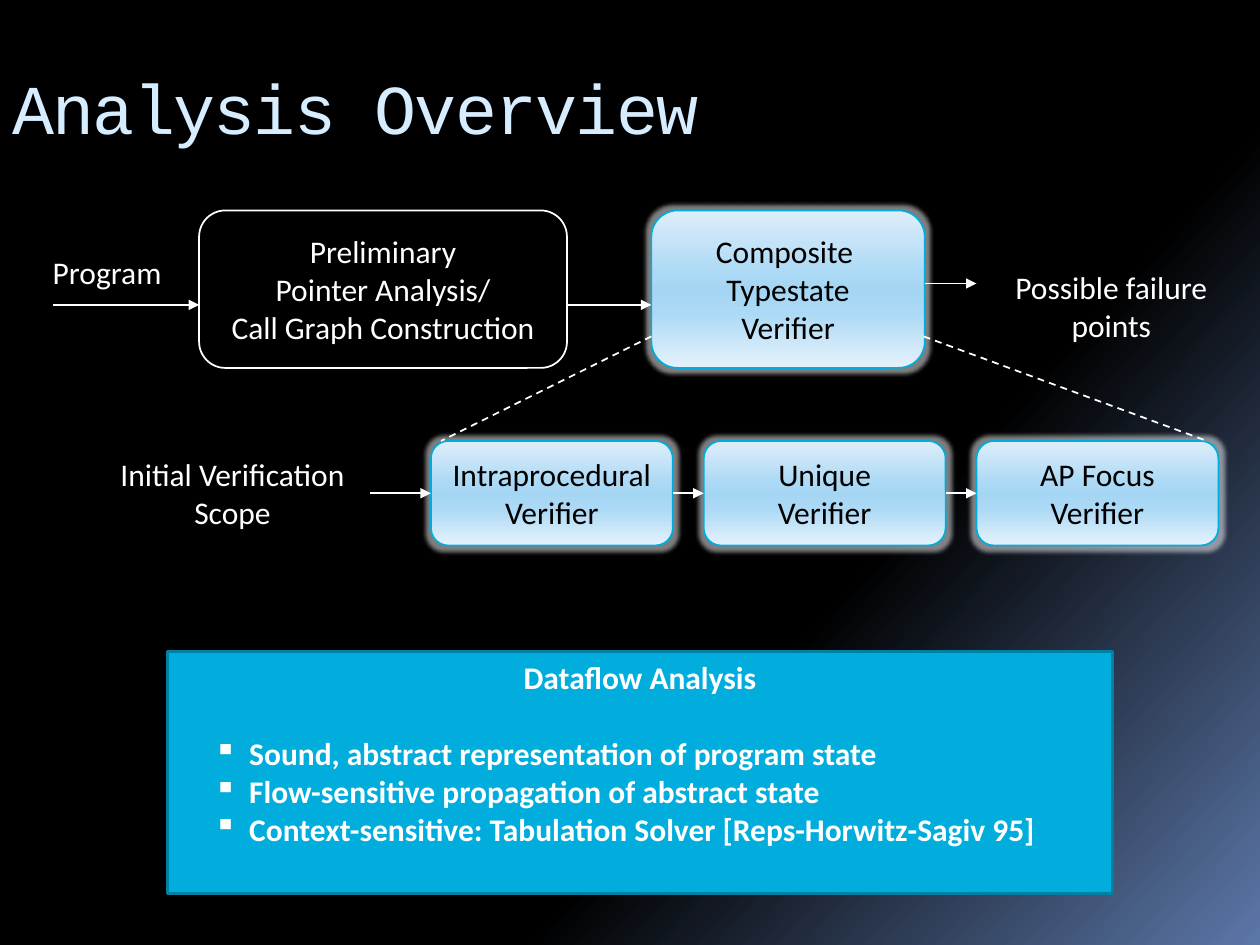
from lxml import etree
from pptx import Presentation
from pptx.dml.color import RGBColor
from pptx.enum import dml, shapes, text
from pptx.oxml import parse_xml
from pptx.oxml.ns import nsdecls, qn
from pptx.util import Inches, Pt

WHITE, BLACK, CYAN = "FFFFFF", "000000", "00ADDC"
NIGHT = [(0, BLACK), (65, BLACK), (100, "5B77A8")]
GLASS = [(0, "DEEEFA"), (40, "ACD9F5"), (50, "A4D6F4"), (65, "ACD9F5"), (100, "E5F2FB")]


def color(value):
    return RGBColor.from_string(value)


def set_gradient(fill, stops, angle):
    fill.gradient()
    fill.gradient_angle = 360 - angle
    stop_list = fill._xPr.find(".//" + qn("a:gsLst"))
    for child in list(stop_list):
        stop_list.remove(child)
    for pos, value in stops:
        gs = etree.SubElement(stop_list, qn("a:gs"), pos=str(pos * 1000))
        etree.SubElement(gs, qn("a:srgbClr"), val=value)


def add_lines(sp, lines, fill=WHITE, size=18, font="Calibri", bold=False, align=text.PP_ALIGN.CENTER):
    tf = sp.text_frame
    for i, line in enumerate(lines):
        p = tf.paragraphs[0] if i == 0 else tf.add_paragraph()
        p.text = line
        p.alignment = align
        p.font.size, p.font.name, p.font.bold = Pt(size), font, bold
        p.font.color.rgb = color(fill)
    return tf


def add_label(s, box, line, **style):
    sp = s.shapes.add_textbox(*map(Inches, box))
    sp.text_frame.word_wrap = True
    add_lines(sp, [line], **style)
    return sp


def add_title(s, box):
    sp = add_label(s, box, "Analysis Overview", fill="D6ECFF", size=40,
                   font="Courier New", align=text.PP_ALIGN.LEFT)
    sp.text_frame.margin_top = Inches(0.18)
    sp.text_frame.paragraphs[0].runs[0].font._element.set("spc", "-100")


def add_node(s, box, lines, glass=True):
    sp = s.shapes.add_shape(shapes.MSO_SHAPE.ROUNDED_RECTANGLE, *map(Inches, box))
    sp.shadow.inherit = False
    sp.line.color.rgb = color(CYAN if glass else WHITE)
    sp.line.width = Pt(1)
    if glass:
        set_gradient(sp.fill, GLASS, 90)
        effects = sp._element.spPr.find(qn("a:effectLst"))
        effects.append(parse_xml(
            f'<a:glow {nsdecls("a")} rad="63500"><a:srgbClr val="{WHITE}">'
            '<a:alpha val="50000"/></a:srgbClr></a:glow>'))
    else:
        sp.fill.background()
    tf = add_lines(sp, lines, BLACK if glass else WHITE)
    tf.word_wrap = False
    tf.vertical_anchor = text.MSO_ANCHOR.MIDDLE
    return sp


def add_line(s, start=(0, 0), end=(0, 0), dashed=False):
    cx = s.shapes.add_connector(shapes.MSO_CONNECTOR.STRAIGHT, *map(Inches, (*start, *end)))
    cx.line.color.rgb = color(WHITE)
    cx.line.width = Pt(1)
    if dashed:
        cx.line.dash_style = dml.MSO_LINE.DASH
    else:
        etree.SubElement(cx.line._get_or_add_ln(), qn("a:tailEnd"), type="triangle")
    etree.SubElement(cx._element.spPr, qn("a:effectLst"))
    return cx


def add_pipeline(s, left, top, width, height):
    arrow_y = top + 0.75
    add_node(s, (left + 1.16, top, 2.92, height),
             ["Preliminary", "Pointer Analysis/", "Call Graph Construction"], glass=False)
    add_node(s, (left + 4.75, top, 2.17, height), ["Composite ", "Typestate", "Verifier"])
    add_label(s, (left - 0.28, top + 0.29, 1.42, 0.4), "Program")
    add_label(s, (left + 7.22, top + 0.41, 2.36, 0.71), "Possible failure points")
    add_line(s, (left, arrow_y), (left + 1.16, arrow_y))
    add_line(s, (left + 4.08, arrow_y), (left + 4.75, arrow_y))
    add_line(s, (left + 6.92, top + 0.58), (left + width, top + 0.58))


def add_verifiers(s, left, top, width, height):
    node_w, first = 1.92, left + 2.67
    step = (left + width - node_w - first) / 2
    previous = add_label(s, (left, top + 0.06, 2.19, 0.71), "Initial Verification Scope")
    for i, name in enumerate(["Intraprocedural", "Unique", "AP Focus"]):
        node = add_node(s, (first + i * step, top, node_w, height), [name, "Verifier"])
        cx = add_line(s)
        cx.begin_connect(previous, 3)
        cx.end_connect(node, 1)
        previous = node


def add_dataflow(s, box):
    sp = s.shapes.add_shape(shapes.MSO_SHAPE.RECTANGLE, *map(Inches, box))
    sp.shadow.inherit = False
    sp.fill.solid()
    sp.fill.fore_color.rgb = color(CYAN)
    sp.line.color.rgb = color("0080A3")
    sp.line.width = Pt(1.5)
    tf = add_lines(sp, [
        "Dataflow Analysis",
        "Sound, abstract representation of program state",
        "Flow-sensitive propagation of abstract state",
        "Context-sensitive: Tabulation Solver [Reps-Horwitz-Sagiv 95]",
    ], bold=True)
    tf.vertical_anchor = text.MSO_ANCHOR.TOP
    heading, *bullets = tf.paragraphs
    heading.space_after = Pt(22)
    for p in bullets:
        p.alignment = text.PP_ALIGN.LEFT
        pPr = p._p.get_or_add_pPr()
        pPr.set("marL", str(Inches(0.55)))
        pPr.set("indent", str(Inches(-0.28)))
        pPr.insert_element_before(
            parse_xml(f'<a:buChar {nsdecls("a")} char="▪"/>'), "a:tabLst", "a:defRPr", "a:extLst")


def main():
    prs = Presentation()
    prs.slide_width, prs.slide_height = Inches(10), Inches(7.5)
    s = prs.slides.add_slide(prs.slide_layouts[6])
    set_gradient(s.background.fill, NIGHT, 42)
    add_title(s, (0, 0.33, 9.02, 0.55))
    add_verifiers(s, 0.75, 3.5, 8.92, 0.83)
    add_pipeline(s, 0.42, 1.67, 7.33, 1.25)
    add_line(s, (7.33, 2.67), (9.58, 3.5), dashed=True)
    add_line(s, (5.17, 2.67), (3.5, 3.5), dashed=True)
    add_dataflow(s, (1.33, 5.17, 7.5, 1.92))
    prs.save("out.pptx")


if __name__ == "__main__":
    main()
